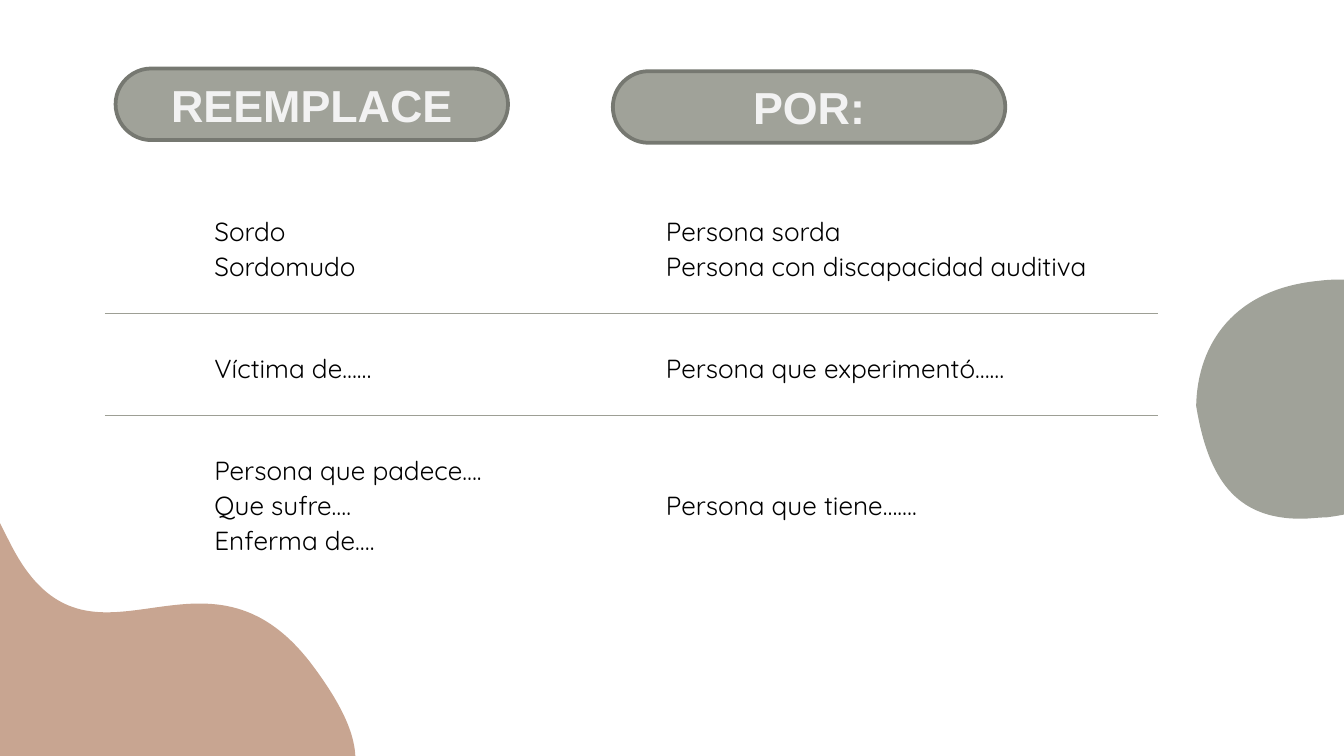
import math
from dataclasses import dataclass

from lxml import etree
from pptx import Presentation
from pptx import util as u
from pptx.dml.color import RGBColor
from pptx.enum import shapes as sh, text as tx
from pptx.oxml.ns import qn

SAGE = RGBColor(0xA0, 0xA2, 0x99)
EDGE = RGBColor(0x76, 0x78, 0x71)
RULE = RGBColor(0x9D, 0x9F, 0x95)
CLAY = RGBColor(0xC8, 0xA5, 0x91)
PALE = RGBColor(0xF2, 0xF2, 0xF2)
INK = RGBColor(0, 0, 0)

# The slide is a grid of 100 columns by 56.25 rows of square cells
COLS, ROWS = 100, 56.25
CELL = u.Inches(0.1)
PLAIN = "{2D5ABB26-0587-4C30-8999-92F81FD0307C}"  # table style without grid

Point = tuple[float, float]


@dataclass
class Blob:
    color: RGBColor
    box: tuple[float, float, float, float]  # left, top, width, height
    turn: float
    start: Point
    curves: list[tuple[Point, Point, Point]]


@dataclass
class Pill:
    label: str
    left: float
    top: float


@dataclass
class Row:
    left: list[str]
    right: list[str]
    high: float
    gap: float  # free space above the text


BLOBS = [
    Blob(CLAY, (-7.1, 26.1, 27.8, 41.4), 330.6, (-7.7, 31.2), [
        ((-7.3, 31), (-6.8, 31), (-6.2, 31.1)),
        ((-2.8, 31.6), (-2.8, 33.5), (0.8, 40.5)),
        ((6.7, 52.1), (15.2, 38.5), (23.4, 49.7)),
        ((27.9, 55.8), (27.3, 59), (22.4, 61.7)),
        ((20.9, 62.5), (19.1, 63.3), (16.9, 64.1)),
        ((7.3, 67.7), (-0.4, 62.3), (-4.1, 48.9)),
        ((-7.3, 37.7), (-9.6, 32.2), (-7.7, 31.2)),
    ]),
    Blob(SAGE, (89, 20.8, 20.2, 17.8), 0, (100.1, 20.8), [
        ((99.5, 20.8), (98.8, 20.8), (98.1, 20.9)),
        ((91.9, 21.5), (89.1, 25.5), (89, 30.2)),
        ((89.9, 35.7), (92, 38.6), (96.8, 38.6)),
        ((97.4, 38.6), (98.1, 38.5), (98.7, 38.5)),
        ((104.8, 37.7), (109.2, 34.8), (107.9, 27.1)),
        ((107.2, 22.6), (104.8, 20.8), (100.1, 20.8)),
    ]),
]
PILLS = [Pill("REEMPLACE", 8.6, 5.1), Pill("POR:", 45.6, 5.3)]
RULES = [23.33, 30.93]
TERMS = [
    Row(["Sordo", "Sordomudo"],
        ["Persona sorda", "Persona con discapacidad auditiva"], 4.5, 0),
    Row(["Víctima de……"], ["Persona que experimentó……"], 3.8, 5),
    Row(["Persona que padece….", "Que sufre….", "Enferma de…."],
        ["Persona que tiene……."], 11.5, 5),
]


def cells(n: float) -> int:
    return round(n * CELL)


def style(item, **vals) -> None:
    for key, val in vals.items():
        setattr(item, key, val)


def spin(pt: Point, hub: Point, deg: float) -> Point:
    ang = math.radians(deg)
    x, y = pt[0] - hub[0], pt[1] - hub[1]
    return (hub[0] + x * math.cos(ang) - y * math.sin(ang),
            hub[1] + x * math.sin(ang) + y * math.cos(ang))


def draw_blob(slide, blob: Blob) -> None:
    left, top, wide, high = blob.box
    hub = (left + wide / 2, top + high / 2)
    # The box fixes the frame, then curves take the place of its sides
    pen = slide.shapes.build_freeform(cells(left), cells(top))
    pen.add_line_segments([(cells(left + wide), cells(top + high))])
    form = pen.convert_to_shape()
    track = next(form._element.iter(qn("a:path")))
    for step in list(track):
        track.remove(step)

    def add(tag: str, *pts: Point) -> None:
        step = etree.SubElement(track, qn(tag))
        for pt in pts:
            x, y = spin(pt, hub, -blob.turn)
            etree.SubElement(step, qn("a:pt"), x=str(cells(x - left)),
                             y=str(cells(y - top)))

    add("a:moveTo", blob.start)
    for curve in blob.curves:
        add("a:cubicBezTo", *curve)
    add("a:close")
    form.rotation = blob.turn
    form.shadow.inherit = False
    form.fill.solid()
    form.fill.fore_color.rgb = blob.color
    form.line.fill.background()


def draw_pill(slide, pill: Pill) -> None:
    box = slide.shapes.add_shape(
        sh.MSO_SHAPE.ROUNDED_RECTANGLE,
        *map(cells, (pill.left, pill.top, 29.2, 5.33)))
    box.adjustments[0] = 0.5
    box.shadow.inherit = False
    box.fill.solid()
    box.fill.fore_color.rgb = SAGE
    box.line.color.rgb = EDGE
    box.line.width = u.Pt(2)
    box.text_frame.vertical_anchor = tx.MSO_ANCHOR.MIDDLE
    para = box.text_frame.paragraphs[0]
    para.alignment = tx.PP_ALIGN.CENTER
    run = para.add_run()
    run.text = pill.label
    style(run.font, name="Arial", size=u.Pt(24), bold=True)
    run.font.color.rgb = PALE


def draw_rule(slide, row: float) -> None:
    rule = slide.shapes.add_connector(
        sh.MSO_CONNECTOR.STRAIGHT, *map(cells, (7.8, row, 86.2, row)))
    rule.line.color.rgb = RULE
    rule.line.width = u.Pt(0.75)
    etree.SubElement(rule._element.spPr, qn("a:effectLst"))


def fill_cell(cell, lines: list[str], gap: float) -> None:
    style(cell, vertical_anchor=tx.MSO_ANCHOR.MIDDLE,
          margin_left=cells(0.7), margin_right=cells(0.7),
          margin_top=cells(gap), margin_bottom=0)
    cell.fill.background()
    frame = cell.text_frame
    for i, line in enumerate(lines):
        para = frame.add_paragraph() if i else frame.paragraphs[0]
        para.line_spacing = 1.07
        run = para.add_run()
        run.text = line
        style(run.font, name="Quicksand", size=u.Pt(14))
        run.font.color.rgb = INK


def draw_table(slide, rows: list[Row]) -> None:
    frame = slide.shapes.add_table(
        len(rows), 2, *map(cells, (15.25, 15.85, 69.9, 24.4)))
    table = frame.table
    style(table, first_row=False, horz_banding=False)
    table._tbl.tblPr.find(qn("a:tableStyleId")).text = PLAIN
    for col, wide in zip(table.columns, (33.6, 36.3)):
        col.width = cells(wide)
    for i, row in enumerate(rows):
        table.rows[i].height = cells(row.high)
        for j, lines in enumerate((row.left, row.right)):
            fill_cell(table.cell(i, j), lines, row.gap)
    frame.height = cells(24.4)


def main() -> None:
    deck = Presentation()
    style(deck, slide_width=cells(COLS), slide_height=cells(ROWS))
    slide = deck.slides.add_slide(deck.slide_layouts[6])
    # Corner shapes
    for blob in BLOBS:
        draw_blob(slide, blob)
    # Column headings
    for pill in PILLS:
        draw_pill(slide, pill)
    # Dividers and terms
    for row in RULES:
        draw_rule(slide, row)
    draw_table(slide, TERMS)
    deck.save("out.pptx")


if __name__ == "__main__":
    main()
